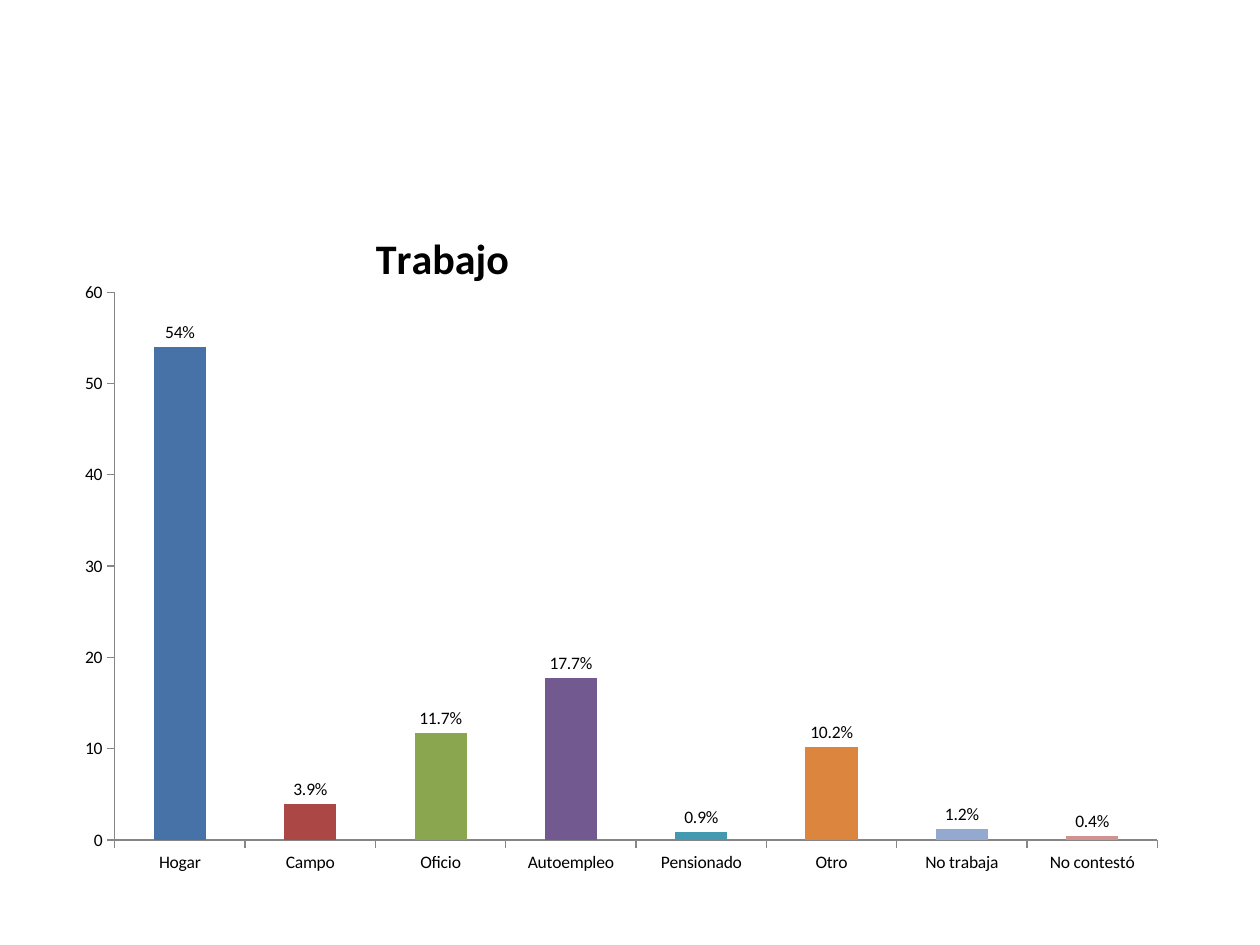
from lxml import etree
from pptx import Presentation
from pptx.chart.data import CategoryChartData
from pptx.dml.color import RGBColor
from pptx.enum.chart import XL_CHART_TYPE, XL_LABEL_POSITION, XL_TICK_MARK
from pptx.oxml.ns import qn
from pptx.util import Emu, Pt

COLUMN = XL_CHART_TYPE.COLUMN_CLUSTERED
ABOVE_BAR = XL_LABEL_POSITION.OUTSIDE_END
TICK_OUT = XL_TICK_MARK.OUTSIDE
TICK_NONE = XL_TICK_MARK.NONE

PX = 914400 // 126
FONT = "Calibri"
BLACK = RGBColor(0x00, 0x00, 0x00)
AXIS_GRAY = RGBColor(0x86, 0x86, 0x86)

# Content: category, value, bar colour
TITLE = "Trabajo"
JOBS = [
    ("Hogar", 54, RGBColor(0x46, 0x72, 0xA8)),
    ("Campo", 3.9, RGBColor(0xAB, 0x47, 0x44)),
    ("Oficio", 11.7, RGBColor(0x8A, 0xA6, 0x4F)),
    ("Autoempleo", 17.7, RGBColor(0x72, 0x59, 0x90)),
    ("Pensionado", 0.9, RGBColor(0x42, 0x99, 0xB0)),
    ("Otro", 10.2, RGBColor(0xDC, 0x85, 0x3E)),
    ("No trabaja", 1.2, RGBColor(0x93, 0xA9, 0xCF)),
    ("No contestó", 0.4, RGBColor(0xD0, 0x93, 0x92)),
]

# Places in px
SLIDE = (1260, 945)
CHART = (44, 204, 1142, 674)
PLOT = (115, 292, 1043, 548)
TITLE_CORNER = (368, 222)


def px(length):
    return Emu(length * PX)


def style_font(font, size, bold=False):
    font.name, font.size, font.bold = FONT, Pt(size), bold
    font.color.rgb = BLACK


def manual_layout(left, top, width=None, height=None):
    """Return a c:layout element for a place given in slide px."""
    chart_left, chart_top, chart_width, chart_height = CHART
    settings = [("xMode", "edge"), ("yMode", "edge"),
                ("x", round((left - chart_left) / chart_width, 3)),
                ("y", round((top - chart_top) / chart_height, 3))]
    if width:
        settings.insert(0, ("layoutTarget", "inner"))
        settings += [("w", round(width / chart_width, 3)),
                     ("h", round(height / chart_height, 3))]
    layout = etree.Element(qn("c:layout"))
    manual = etree.SubElement(layout, qn("c:manualLayout"))
    for tag, value in settings:
        etree.SubElement(manual, qn(f"c:{tag}")).set("val", str(value))
    return layout


def place(parent, layout, index):
    for old in parent.findall(qn("c:layout")):
        parent.remove(old)
    parent.insert(index, layout)


prs = Presentation()
prs.slide_width, prs.slide_height = map(px, SLIDE)
slide = prs.slides.add_slide(prs.slide_layouts[6])

# Chart
job_data = CategoryChartData(number_format="0.0")
job_data.categories = [job for job, _, _ in JOBS]
job_data.add_series("Series 1", [share for _, share, _ in JOBS])
chart = slide.shapes.add_chart(COLUMN, *map(px, CHART), job_data).chart
chart.has_legend = False
style_font(chart.font, 10)
plot_area = chart._chartSpace.chart.plotArea
place(plot_area, manual_layout(*PLOT), 0)

# Title
chart.has_title = True
title = chart.chart_title
title.text_frame.text = TITLE
style_font(title.text_frame.paragraphs[0].runs[0].font, 24, bold=True)
title.include_in_layout = False
place(title._element, manual_layout(*TITLE_CORNER), 1)

# Axes
for axis in (chart.category_axis, chart.value_axis):
    axis.has_major_gridlines = False
    axis.major_tick_mark, axis.minor_tick_mark = TICK_OUT, TICK_NONE
    axis.format.line.color.rgb = AXIS_GRAY
    axis.format.line.width = Pt(0.75)
    style_font(axis.tick_labels.font, 10)
shares = chart.value_axis
shares.minimum_scale, shares.maximum_scale, shares.major_unit = 0, 60, 10
shares.tick_labels.number_format = "0"
shares.tick_labels.number_format_is_linked = False

# Bars and their labels
bars = chart.plots[0]
bars.gap_width = 150
bars.vary_by_categories = False
series = bars.series[0]
series.invert_if_negative = False
labels = series.data_labels
labels.show_value = True
labels.number_format, labels.number_format_is_linked = "0.0", False
labels.position = ABOVE_BAR
style_font(labels.font, 10)
for index, (_, share, color) in enumerate(JOBS):
    point = series.points[index]
    point.format.fill.solid()
    point.format.fill.fore_color.rgb = color
    label = point.data_label
    label.text_frame.text = f"{share}%"
    style_font(label.text_frame.paragraphs[0].runs[0].font, 10)
    label.position = ABOVE_BAR

prs.save("out.pptx")
